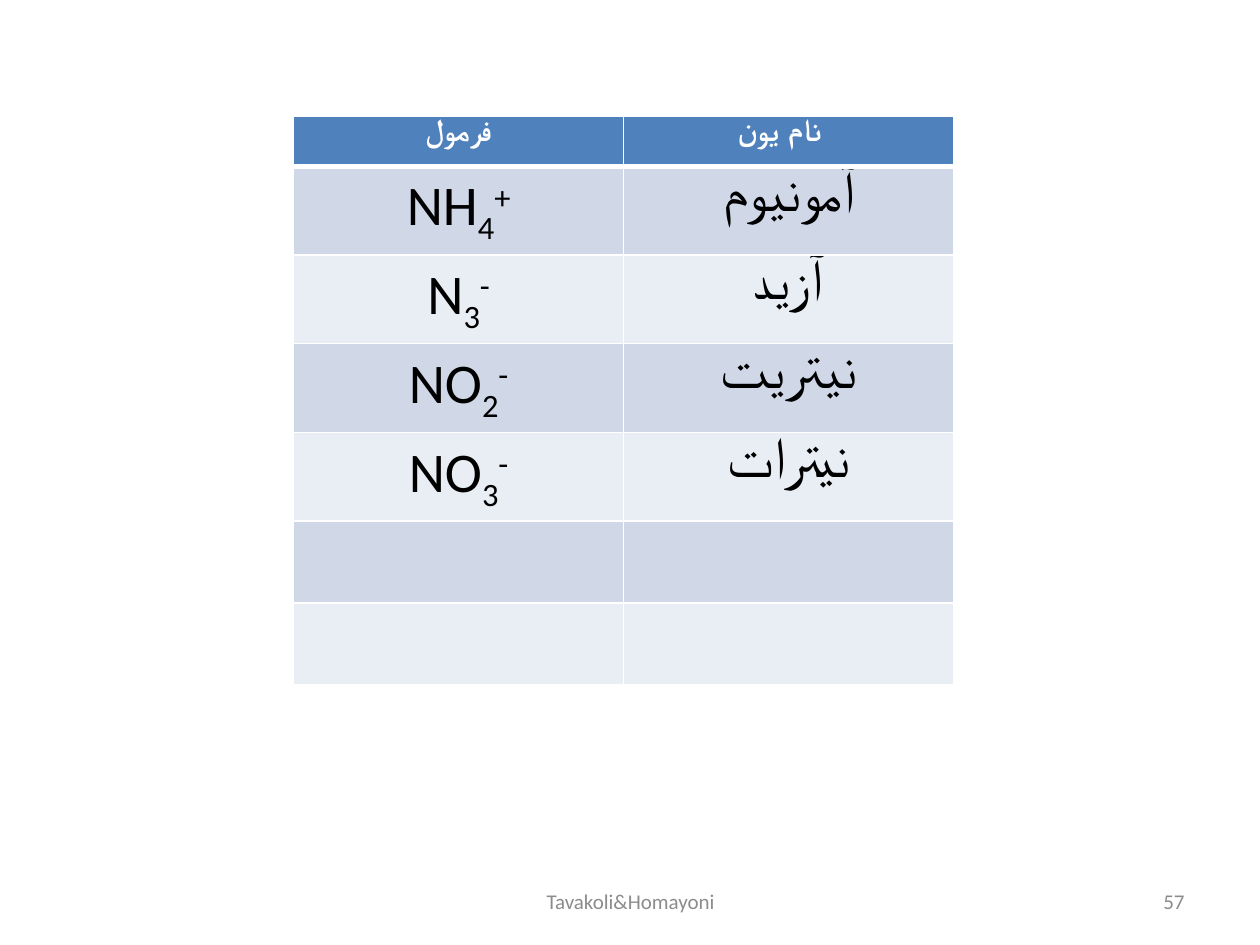
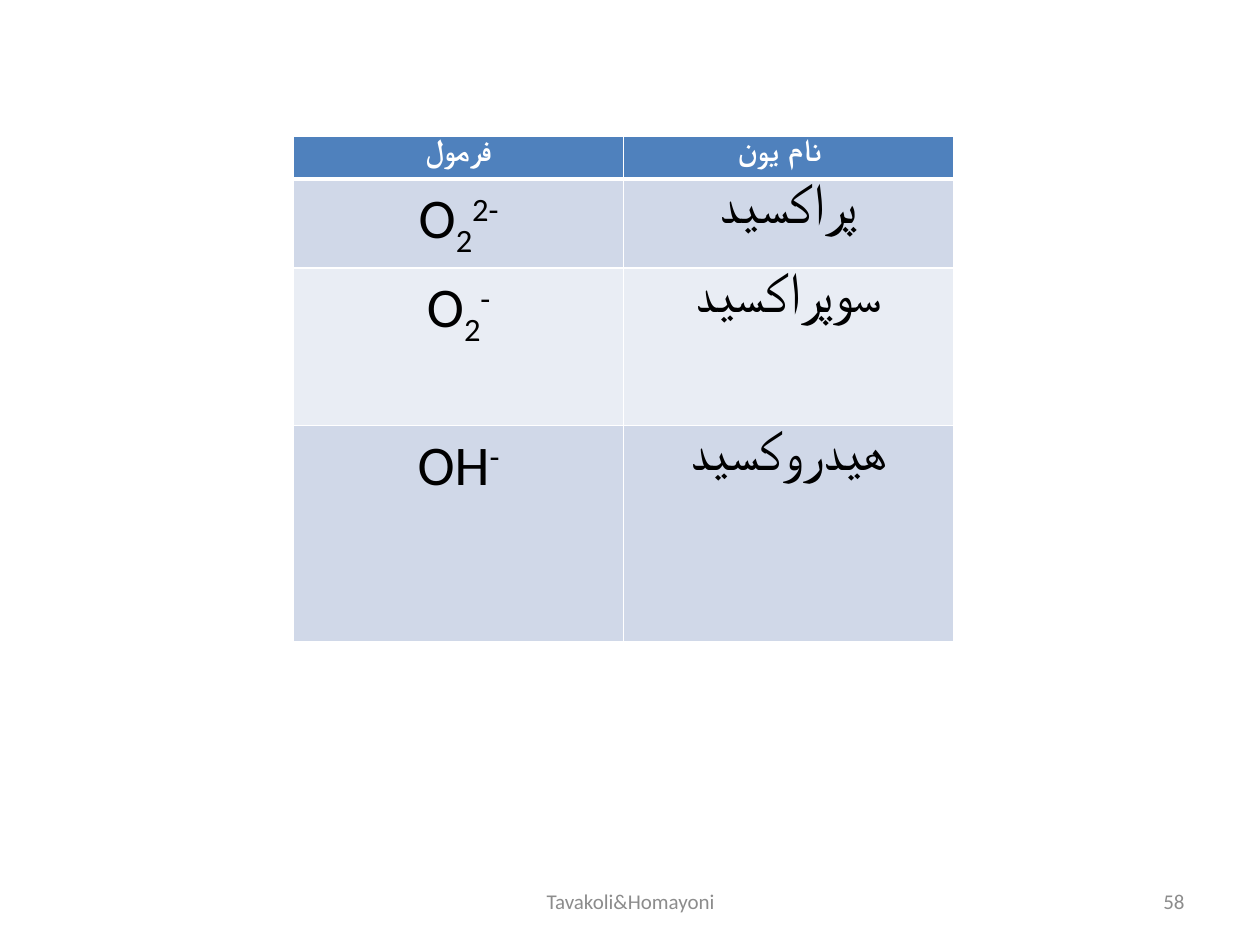
from dataclasses import dataclass

from lxml.etree import SubElement
from pptx import Presentation
from pptx.dml.color import RGBColor
from pptx.enum.text import MSO_ANCHOR, PP_ALIGN as Align
from pptx.oxml.ns import qn
from pptx.util import Inches, Pt

FONT = "Calibri"
COLORS = {
    "header": "4F81BD",
    "band_dark": "D0D8E8",
    "band_light": "E9EDF4",
    "border": "FFFFFF",
    "header_text": "FFFFFF",
    "body_text": "000000",
    "footer_text": "8C8C8C",
}
FORMULA_HEADER = "فرمول"
NAME_HEADER = "نام یون"
FOOTER = "Tavakoli&Homayoni"
TABLE_LEFT, COLUMN_WIDTH = 2.33, 2.62
SUBSCRIPT, SUPERSCRIPT = -25000, 30000


@dataclass(frozen=True)
class Ion:
    name: str
    base: str
    count: str
    charge: str


@dataclass(frozen=True)
class IonSlide:
    number: int
    top: float
    row_heights: tuple[float, ...]
    ions: tuple[Ion, ...]


SLIDES = (
    IonSlide(57, 0.92, (0.4, 0.7, 0.7, 0.7, 0.7, 0.65, 0.65), (
        Ion("آمونیوم", "NH", "4", "+"),
        Ion("آزید", "N", "3", "-"),
        Ion("نیتریت", "NO", "2", "-"),
        Ion("نیترات", "NO", "3", "-"),
    )),
    IonSlide(58, 1.08, (0.34, 0.7, 1.25, 1.72), (
        Ion("پراکسید", "O", "2", "2-"),
        Ion("سوپراکسید", "O", "2", "-"),
        Ion("هیدروکسید", "OH", "", "-"),
    )),
)


def rgb(color: str) -> RGBColor:
    return RGBColor.from_string(COLORS[color])


def style_run(run, size: float, color: str, bold: bool = False) -> None:
    run.font.name = FONT
    run.font.size = Pt(size)
    run.font.bold = bold
    run.font.color.rgb = rgb(color)


def style_cell(cell, row: int) -> None:
    """Fill the cell by its row; the rule below the header is thicker."""
    properties = cell._tc.get_or_add_tcPr()
    widths = {"L": 1, "R": 1, "T": 3 if row == 1 else 1, "B": 3 if row == 0 else 1}
    for side, width in widths.items():
        line = SubElement(properties, qn(f"a:ln{side}"), w=str(Pt(width)))
        fill = SubElement(line, qn("a:solidFill"))
        SubElement(fill, qn("a:srgbClr"), val=COLORS["border"])
    cell.fill.solid()
    band = "band_dark" if row % 2 else "band_light"
    cell.fill.fore_color.rgb = rgb("header" if row == 0 else band)


def write_persian(cell, text: str, size: float, color: str, bold: bool = False) -> None:
    cell.margin_top = cell.margin_bottom = 0
    paragraph = cell.text_frame.paragraphs[0]
    paragraph.text = text
    paragraph.alignment = Align.CENTER
    paragraph._p.get_or_add_pPr().set("rtl", "1")
    style_run(paragraph.runs[0], size, color, bold)


def write_formula(cell, ion: Ion) -> None:
    paragraph = cell.text_frame.paragraphs[0]
    paragraph.alignment = Align.CENTER
    parts = ((ion.base, 0), (ion.count, SUBSCRIPT), (ion.charge, SUPERSCRIPT))
    for text, baseline in parts:
        if text:
            run = paragraph.add_run()
            run.text = text
            style_run(run, 32, "body_text")
            run.font._element.set("baseline", str(baseline))


def add_ion_table(slide, content: IonSlide) -> None:
    heights = content.row_heights
    table = slide.shapes.add_table(
        len(heights), 2, Inches(TABLE_LEFT), Inches(content.top),
        Inches(2 * COLUMN_WIDTH), Inches(sum(heights))).table
    for column in table.columns:
        column.width = Inches(COLUMN_WIDTH)
    for index, height in enumerate(heights):
        table.rows[index].height = Inches(height)
        for cell in table.rows[index].cells:
            style_cell(cell, index)

    for column, heading in enumerate((FORMULA_HEADER, NAME_HEADER)):
        write_persian(table.cell(0, column), heading, 18, "header_text", bold=True)
    table.cell(0, 1).margin_right = Inches(0.24)
    for row, ion in enumerate(content.ions, start=1):
        write_formula(table.cell(row, 0), ion)
        write_persian(table.cell(row, 1), ion.name, 32, "body_text")


def add_footer(slide, text: str, left: float, width: float, alignment: Align) -> None:
    footer = slide.shapes.add_textbox(
        Inches(left), Inches(6.95), Inches(width), Inches(0.4))
    frame = footer.text_frame
    frame.word_wrap = True
    frame.vertical_anchor = MSO_ANCHOR.MIDDLE
    frame.text = text
    paragraph = frame.paragraphs[0]
    paragraph.alignment = alignment
    style_run(paragraph.runs[0], 12, "footer_text")


def main() -> None:
    deck = Presentation()
    deck.slide_width, deck.slide_height = Inches(10), Inches(7.5)
    for content in SLIDES:
        slide = deck.slides.add_slide(deck.slide_layouts[6])
        add_ion_table(slide, content)
        add_footer(slide, str(content.number), 7.17, 2.33, Align.RIGHT)
        add_footer(slide, FOOTER, 3.42, 3.17, Align.CENTER)
    deck.save("out.pptx")


if __name__ == "__main__":
    main()
